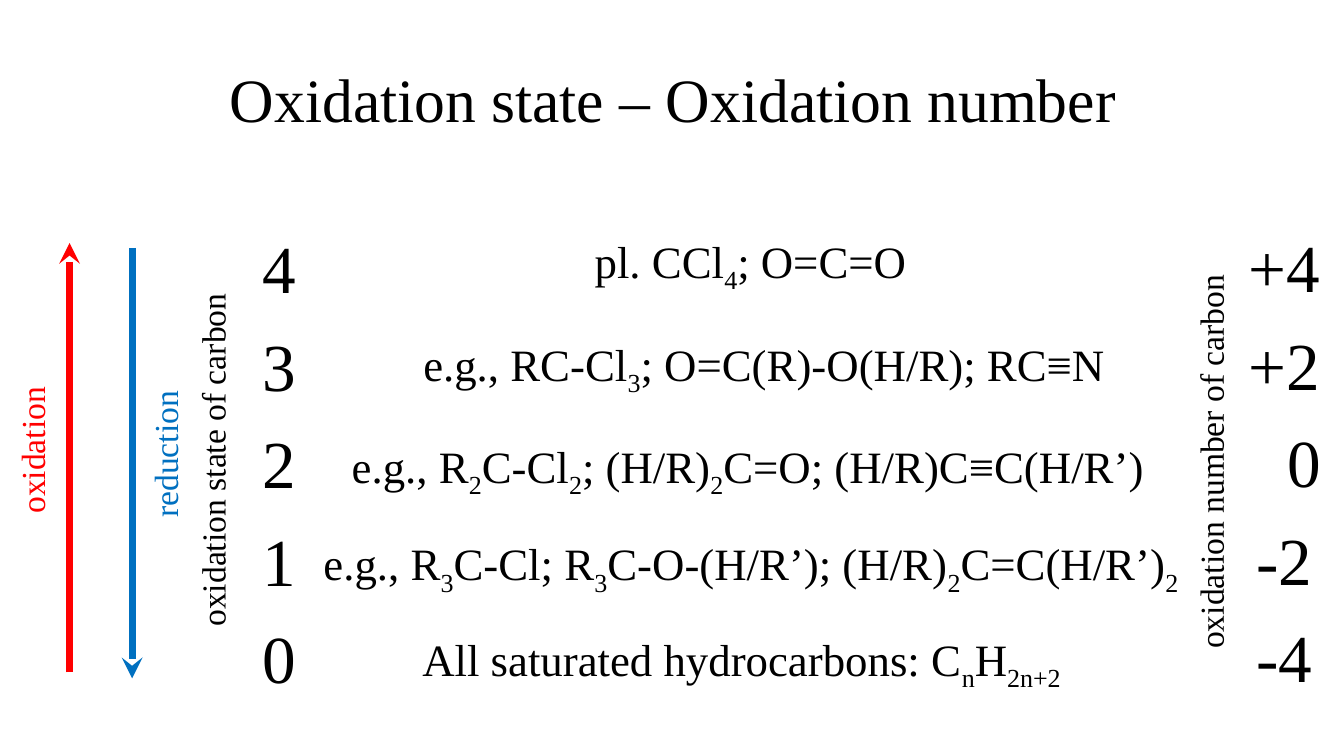
from lxml import etree
from pptx import Presentation, util as u
from pptx.dml.color import RGBColor
from pptx.enum import shapes, text
from pptx.oxml.ns import qn

SCALE = 9144  # EMU in one px, 100 px to the inch
INK = {"text": "000000", "up": "FF0000", "down": "0070C0"}
FONT = "Times New Roman"
LEFT, MID, RIGHT = text.PP_ALIGN.LEFT, text.PP_ALIGN.CENTER, text.PP_ALIGN.RIGHT


def px(n):
    return u.Emu(n * SCALE)


class Board:
    def __init__(self, slide, font, ink):
        self.slide, self.font, self.ink = slide, font, ink

    def box(self, left, top, wide, high):
        shape = self.slide.shapes.add_textbox(px(left), px(top), px(wide), px(high))
        shape.text_frame.word_wrap = False
        shape.text_frame.auto_size = text.MSO_AUTO_SIZE.SHAPE_TO_FIT_TEXT
        return shape

    def fill(self, para, words, size, ink="text"):
        """Add runs; every second part between bars is a subscript."""
        for i, part in enumerate(words.split("|")):
            if not part:
                continue
            run = para.add_run()
            run.text = part
            run.font.name = self.font
            run.font.size = u.Pt(size)
            run.font.color.rgb = RGBColor.from_string(self.ink[ink])
            if i % 2:
                run._r.get_or_add_rPr().set("baseline", "-25000")

    def title(self, words, left, top, wide, high):
        frame = self.box(left, top, wide, high).text_frame
        frame.word_wrap = True
        frame.auto_size = text.MSO_AUTO_SIZE.NONE
        frame.vertical_anchor = text.MSO_ANCHOR.MIDDLE
        para = frame.paragraphs[0]
        para.alignment = MID
        para.line_spacing = 0.9
        self.fill(para, words, 44)

    def label(self, words, left, top, wide, ink="text"):
        """Text that reads from bottom to top."""
        shape = self.box(left, top, wide, 50)
        shape.rotation = 270
        self.fill(shape.text_frame.paragraphs[0], words, 24, ink)

    def row(self, words, left, top, wide):
        self.fill(self.box(left, top, wide, 64).text_frame.paragraphs[0], words, 32)

    def column(self, items, left, top, wide):
        frame = self.box(left, top, wide, 481).text_frame
        for i, (words, align) in enumerate(items):
            para = frame.add_paragraph() if i else frame.paragraphs[0]
            para.alignment = align
            para.space_after = u.Pt(12)
            self.fill(para, words, 48)

    def arrow(self, x, start, end, ink):
        line = self.slide.shapes.add_connector(
            shapes.MSO_CONNECTOR.STRAIGHT, px(x), px(start), px(x), px(end))
        line.line.width = u.Pt(5)
        line.line.color.rgb = RGBColor.from_string(self.ink[ink])
        props = line._element.spPr
        etree.SubElement(props.get_or_add_ln(), qn("a:tailEnd"), type="stealth")
        etree.SubElement(props, qn("a:effectLst"))


def main():
    deck = Presentation()
    deck.slide_width, deck.slide_height = px(1333), px(750)
    board = Board(deck.slides.add_slide(deck.slide_layouts[6]), FONT, INK)

    board.title("Oxidation state – Oxidation number", 93, 14, 1150, 175)

    board.arrow(69, 667, 241, "up")
    board.arrow(131, 246, 673, "down")
    board.label("oxidation", -42, 421, 147, "up")
    board.label("reduction", 90, 425, 147, "down")
    board.label("oxidation state of carbon", 34, 430, 353)
    board.label("oxidation number of carbon", 1003, 431, 395)

    board.column([(state, LEFT) for state in "43210"], 251, 220, 54)
    board.column([("+4", MID), ("+2", MID), ("0", RIGHT), ("-2", MID), ("-4", MID)],
                 1228, 219, 92)

    for words, left, top, wide in (
        ("pl. CCl|4|; O=C=O", 580, 227, 334),
        ("e.g., RC-Cl|3|; O=C(R)-O(H/R); RC≡N", 410, 329, 704),
        ("e.g., R|2|C-Cl|2|; (H/R)|2|C=O; (H/R)C≡C(H/R’)", 339, 430, 819),
        ("e.g., R|3|C-Cl; R|3|C-O-(H/R’); (H/R)|2|C=C(H/R’)|2|", 311, 527, 875),
        ("All saturated hydrocarbons: C|n|H|2n+2|", 409, 622, 669),
    ):
        board.row(words, left, top, wide)

    deck.save("out.pptx")


if __name__ == "__main__":
    main()
